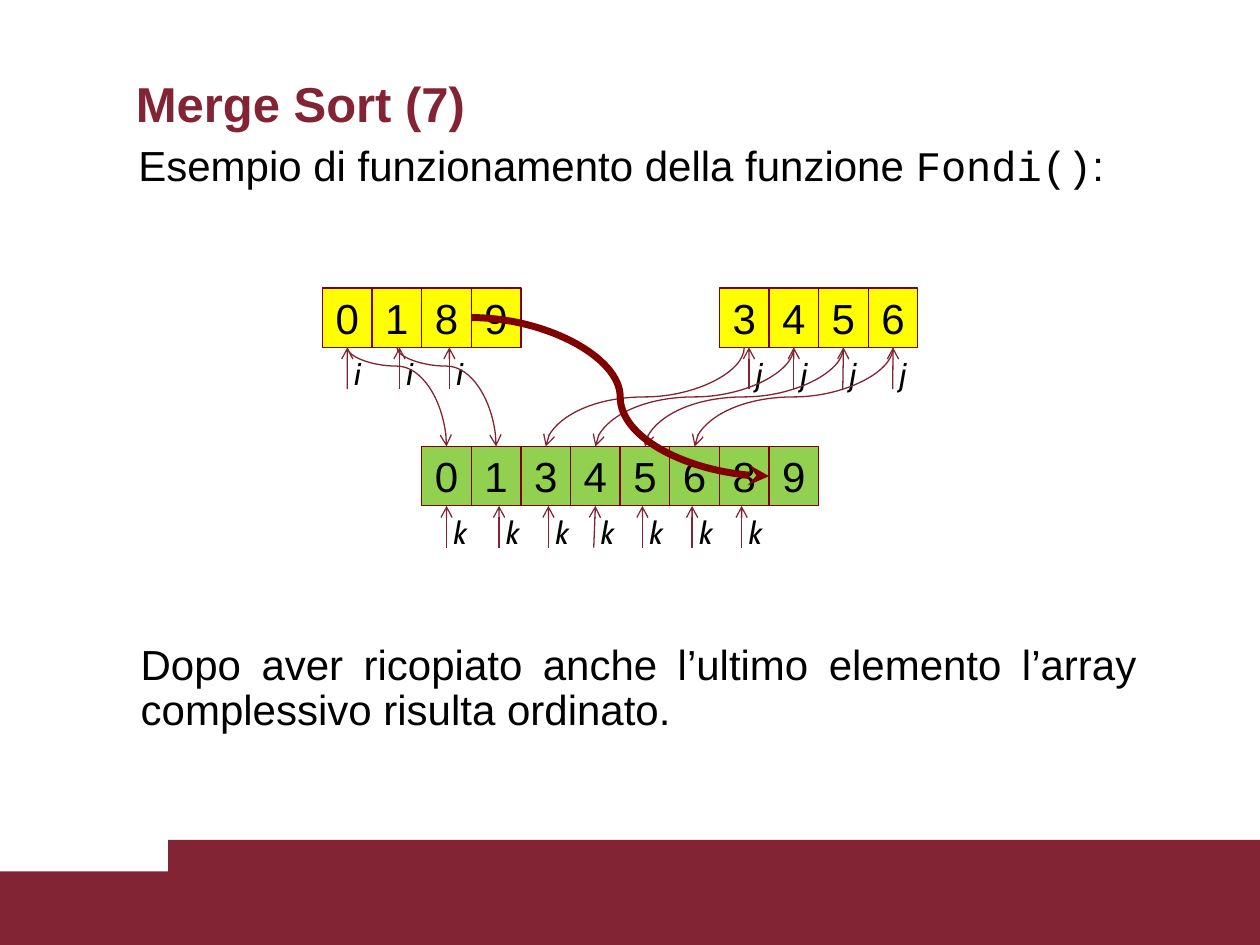
from dataclasses import dataclass

from lxml import etree
from pptx import Presentation
from pptx.dml.color import RGBColor
from pptx.enum.shapes import MSO_CONNECTOR, MSO_SHAPE
from pptx.enum.text import MSO_ANCHOR, PP_ALIGN
from pptx.oxml.ns import qn
from pptx.util import Pt

RECTANGLE = MSO_SHAPE.RECTANGLE
STRAIGHT, CURVED = MSO_CONNECTOR.STRAIGHT, MSO_CONNECTOR.CURVE
MIDDLE, TOP = MSO_ANCHOR.MIDDLE, MSO_ANCHOR.TOP
CENTER, JUSTIFY, LEFT = PP_ALIGN.CENTER, PP_ALIGN.JUSTIFY, PP_ALIGN.LEFT
BOTTOM_SIDE = 2


@dataclass(frozen=True)
class Theme:
    wine: RGBColor = RGBColor(0x82, 0x24, 0x33)
    maroon: RGBColor = RGBColor(0x80, 0, 0)
    yellow: RGBColor = RGBColor(0xFF, 0xFF, 0)
    green: RGBColor = RGBColor(0x92, 0xD0, 0x50)
    black: RGBColor = RGBColor(0, 0, 0)
    title_size: float = 28
    body_size: float = 24
    label_size: float = 18
    sans: str = "Arial"
    mono: str = "Courier New"
    label_font: str = "Cabin"
    thin: float = 0.75
    thick: float = 4


@dataclass(frozen=True)
class Span:
    text: str
    size: float
    font: str
    color: RGBColor
    bold: bool = False
    italic: bool = False


@dataclass(frozen=True)
class Area:
    left: float
    top: float
    width: float
    height: float


@dataclass(frozen=True)
class ArrayRow:
    values: str
    left: float
    top: float
    fill: RGBColor

    def center(self, index: int) -> float:
        return self.left + (index + 0.5) * CELL_WIDTH


@dataclass(frozen=True)
class PointerSet:
    letter: str
    row: ArrayRow
    tips: tuple
    label_width: float


@dataclass(frozen=True)
class Move:
    source: ArrayRow
    source_index: int
    target_index: int
    bend: int


THEME = Theme()
CELL_WIDTH, CELL_HEIGHT = 28.35, 34
POINTER_LENGTH = 23.8
LEFT_ROW = ArrayRow("0189", 184.3, 164.5, THEME.yellow)
RIGHT_ROW = ArrayRow("3456", 411.1, 164.5, THEME.yellow)
MERGED_ROW = ArrayRow("01345689", 241, 255.1, THEME.green)
ROWS = (LEFT_ROW, RIGHT_ROW, MERGED_ROW)
POINTERS = (
    PointerSet("i", LEFT_ROW, (198.5, 228.3, 256.8), 18.7),
    PointerSet("j", RIGHT_ROW, (428, 453.6, 481.6, 510.1), 18.7),
    PointerSet("k", MERGED_ROW, (255.2, 285.2, 313.4, 339.3, 367.1, 395.5, 423.8), 23.8),
)
MOVES = tuple(Move(LEFT_ROW, index, index, 18900) for index in range(2)) + tuple(
    Move(RIGHT_ROW, index, index + 2, 50000) for index in range(4))


def add_span(para, span: Span) -> None:
    run = para.add_run()
    run.text = span.text
    font = run.font
    font.name, font.size = span.font, Pt(span.size)
    font.bold, font.italic = span.bold, span.italic
    font.color.rgb = span.color


def add_text(page, area: Area, spans, align=LEFT, spacing=1.0, before=0.0, wrap=True) -> None:
    box = page.shapes.add_textbox(Pt(area.left), Pt(area.top), Pt(area.width), Pt(area.height))
    frame = box.text_frame
    frame.word_wrap = wrap
    frame.vertical_anchor = TOP
    para = frame.paragraphs[0]
    para.alignment, para.line_spacing, para.space_before = align, spacing, Pt(before)
    for span in spans:
        add_span(para, span)


def add_block(page, area: Area, fill: RGBColor):
    box = page.shapes.add_shape(RECTANGLE, Pt(area.left), Pt(area.top), Pt(area.width), Pt(area.height))
    box.shadow.inherit = False
    box.fill.solid()
    box.fill.fore_color.rgb = fill
    box.line.fill.background()
    return box


def add_cell(page, row: ArrayRow, index: int):
    area = Area(row.left + index * CELL_WIDTH, row.top, CELL_WIDTH, CELL_HEIGHT)
    box = add_block(page, area, row.fill)
    box.line.color.rgb = THEME.maroon
    box.line.width = Pt(THEME.thin)
    frame = box.text_frame
    frame.margin_left = frame.margin_right = frame.margin_top = frame.margin_bottom = 0
    frame.vertical_anchor = MIDDLE
    para = frame.paragraphs[0]
    para.alignment, para.space_before = CENTER, Pt(4.8)
    add_span(para, Span(row.values[index], THEME.body_size, THEME.sans, THEME.black))
    return box


def add_arrow(page, kind, start, end, color: RGBColor, width: float, head: str):
    arrow = page.shapes.add_connector(kind, *(Pt(value) for value in (*start, *end)))
    arrow.line.color.rgb = color
    arrow.line.width = Pt(width)
    etree.SubElement(arrow.line._get_or_add_ln(), qn("a:tailEnd"), type=head)
    etree.SubElement(arrow._element.spPr, qn("a:effectLst"))
    return arrow


def add_pointers(page, pointers: PointerSet, cells) -> None:
    row = pointers.row
    tip_y = row.top + CELL_HEIGHT
    for tip_x in pointers.tips:
        arrow = add_arrow(page, STRAIGHT, (tip_x, tip_y + POINTER_LENGTH), (tip_x, tip_y),
                          THEME.wine, THEME.thin, "arrow")
        index = int((tip_x - row.left) // CELL_WIDTH)
        if abs(tip_x - row.center(index)) < 1:
            arrow.end_connect(cells[row][index], BOTTOM_SIDE)
        label = Span(pointers.letter, THEME.label_size, THEME.label_font, THEME.black, italic=True)
        add_text(page, Area(tip_x - 3, tip_y + 0.3, pointers.label_width, 28.8), [label], wrap=False)


def add_move(page, move: Move) -> None:
    start_x, end_x = move.source.center(move.source_index), MERGED_ROW.center(move.target_index)
    start_y, end_y = move.source.top + CELL_HEIGHT, MERGED_ROW.top
    middle_x, middle_y = (start_x + end_x) / 2, (start_y + end_y) / 2
    rightward = end_x > start_x
    half_width = (end_y - start_y) / 2 * (-1 if rightward else 1)
    half_height = abs(end_x - start_x) / 2
    arrow = add_arrow(page, CURVED, (middle_x - half_width, middle_y - half_height),
                      (middle_x + half_width, middle_y + half_height),
                      THEME.wine, THEME.thin, "arrow")
    properties = arrow._element.spPr
    properties.find(qn("a:xfrm")).set("rot", str((270 if rightward else 90) * 60000))
    guides = properties.find(qn("a:prstGeom")).find(qn("a:avLst"))
    etree.SubElement(guides, qn("a:gd"), name="adj1", fmla=f"val {move.bend}")


def main() -> None:
    deck = Presentation()
    deck.slide_width, deck.slide_height = Pt(720), Pt(540)
    page = deck.slides.add_slide(deck.slide_layouts[6])

    for area in (Area(0, 498, 720, 42), Area(96, 480, 624, 60)):
        add_block(page, area, THEME.wine)

    add_text(page, Area(70.6, 38.2, 595.4, 39.6),
             [Span("Merge Sort (7)", THEME.title_size, THEME.sans, THEME.wine, bold=True)], before=2.6)
    intro = (("Esempio di funzionamento della funzione ", THEME.sans), ("Fondi()", THEME.mono), (":", THEME.sans))
    add_text(page, Area(72, 79.2, 583.2, 46),
             [Span(text, THEME.body_size, font, THEME.black) for text, font in intro], JUSTIFY, 0.9, 2.2)

    cells = {row: [add_cell(page, row, index) for index in range(len(row.values))] for row in ROWS}
    for pointers in POINTERS:
        add_pointers(page, pointers, cells)
    for move in MOVES:
        add_move(page, move)
    add_arrow(page, CURVED, (LEFT_ROW.left + 3 * CELL_WIDTH, LEFT_ROW.top + CELL_HEIGHT / 2),
              (MERGED_ROW.left + 7 * CELL_WIDTH, MERGED_ROW.top + CELL_HEIGHT / 2),
              THEME.maroon, THEME.thick, "stealth")

    closing = "Dopo aver ricopiato anche l’ultimo elemento l’array complessivo risulta ordinato."
    add_text(page, Area(73.3, 364.3, 583.2, 46),
             [Span(closing, THEME.body_size, THEME.sans, THEME.black)], JUSTIFY, 0.9, 2.2)

    deck.save("out.pptx")


if __name__ == "__main__":
    main()
